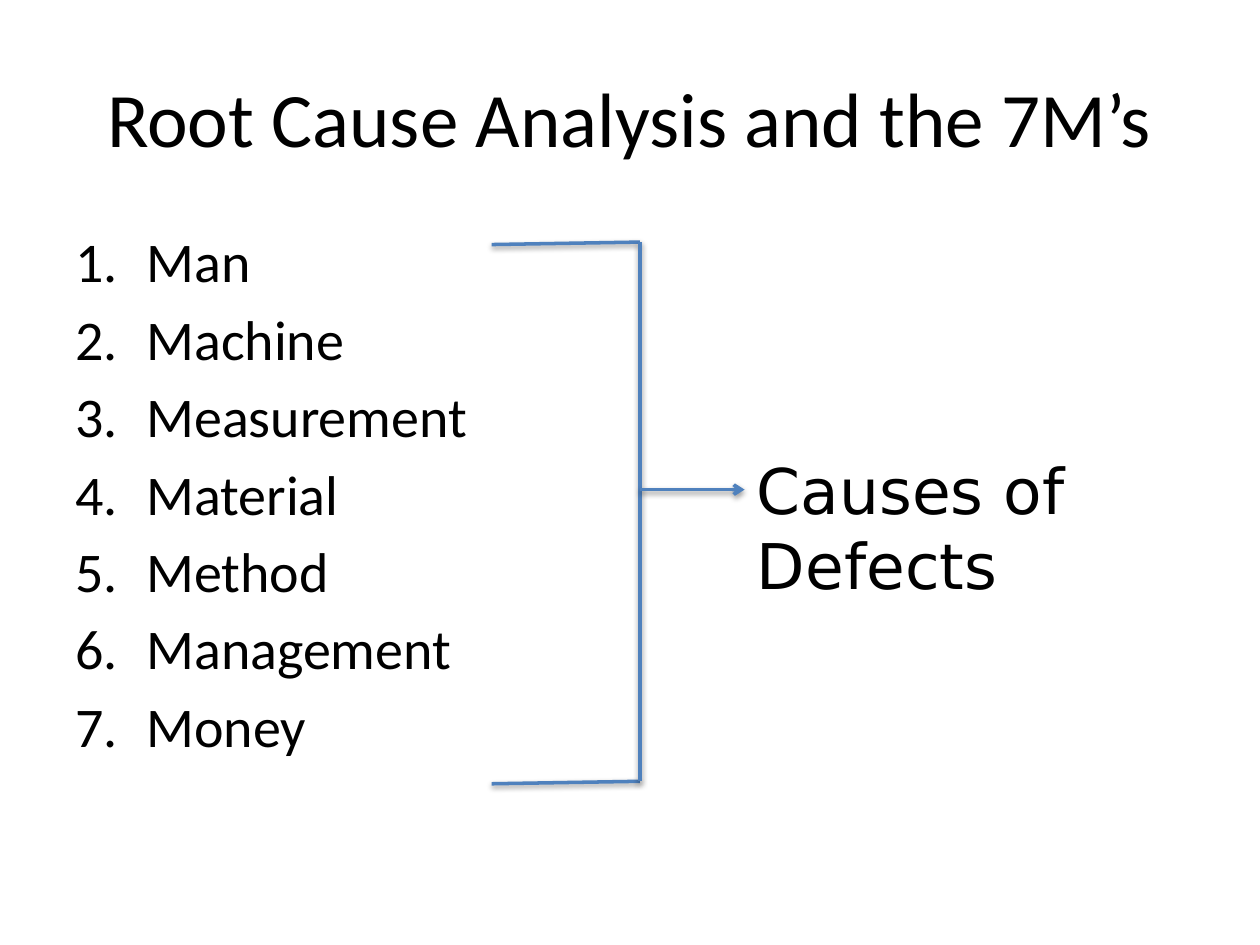
"""Build the slide on root cause analysis and the 7M's."""
from dataclasses import dataclass

from lxml.etree import SubElement
from pptx import Presentation
from pptx.dml.color import RGBColor
from pptx.enum.shapes import MSO_CONNECTOR
from pptx.enum.text import MSO_ANCHOR, PP_ALIGN
from pptx.oxml import parse_xml
from pptx.oxml.ns import nsdecls, qn
from pptx.util import Cm, Pt


@dataclass(frozen=True)
class Theme:
    text: RGBColor = RGBColor(0x00, 0x00, 0x00)
    accent: RGBColor = RGBColor(0x4F, 0x81, 0xBD)
    font: str = "Calibri"
    label_font: str = "DejaVu Sans"
    title_size: float = 44
    body_size: float = 32
    label_size: float = 36
    line_width: float = 2


@dataclass(frozen=True)
class Box:
    x: float
    y: float
    w: float
    h: float


@dataclass(frozen=True)
class Segment:
    x1: float
    y1: float
    x2: float
    y2: float


THEME = Theme()
TITLE = Box(1.27, 0.76, 22.86, 3.18)
LIST = Box(1.27, 4.45, 8.64, 12.57)
LABEL = Box(15.01, 8.97, 10.39, 1.8)
CAUSES = ["Man", "Machine", "Measurement", "Material", "Method", "Management", "Money"]
LEFT, SPINE, TOP, BOTTOM, SLANT = 9.91, 12.9, 4.88, 15.75, 0.05
BRACKET = [
    Segment(LEFT, TOP + SLANT, SPINE, TOP),
    Segment(LEFT, BOTTOM + SLANT, SPINE, BOTTOM),
    Segment(SPINE, TOP, SPINE, BOTTOM),
]
ARROW = Segment(SPINE, LABEL.y + LABEL.h / 2, LABEL.x, LABEL.y + LABEL.h / 2)
SHADOW = (
    f'<a:effectLst {nsdecls("a")}><a:outerShdw blurRad="40000" dist="20000" dir="5400000" '
    'rotWithShape="0"><a:srgbClr val="000000"><a:alpha val="38000"/></a:srgbClr>'
    "</a:outerShdw></a:effectLst>"
)


def add_text(slide, box: Box, lines: list[str], *, size: float, font: str = THEME.font,
             align=PP_ALIGN.LEFT, anchor=MSO_ANCHOR.TOP, numbered: bool = False,
             gap: float = 0):
    """Add a text box with one paragraph per line."""
    sp = slide.shapes.add_textbox(Cm(box.x), Cm(box.y), Cm(box.w), Cm(box.h))
    tf = sp.text_frame
    tf.word_wrap = True
    tf.vertical_anchor = anchor
    for i, line in enumerate(lines):
        p = tf.paragraphs[0] if i == 0 else tf.add_paragraph()
        if numbered:
            pPr = p._p.get_or_add_pPr()
            pPr.set("marL", str(Cm(1.43)))
            pPr.set("indent", str(-Cm(1.43)))
            SubElement(pPr, qn("a:buFont"), typeface="+mj-lt")
            SubElement(pPr, qn("a:buAutoNum"), type="arabicPeriod")
        p.alignment = align
        if i and gap:
            p.space_before = Pt(gap)
        r = p.add_run()
        r.text = line
        r.font.name = font
        r.font.size = Pt(size)
        r.font.color.rgb = THEME.text
    return sp


def add_line(slide, seg: Segment, *, arrow: bool = False):
    """Draw a shadowed straight connector."""
    cxn = slide.shapes.add_connector(
        MSO_CONNECTOR.STRAIGHT, Cm(seg.x1), Cm(seg.y1), Cm(seg.x2), Cm(seg.y2))
    cxn.line.color.rgb = THEME.accent
    cxn.line.width = Pt(THEME.line_width)
    if arrow:
        SubElement(cxn.line._get_or_add_ln(), qn("a:tailEnd"), type="arrow")
    cxn._element.spPr.append(parse_xml(SHADOW))
    return cxn


def main() -> None:
    """Compose and save the slide."""
    prs = Presentation()
    prs.slide_width, prs.slide_height = Cm(25.4), Cm(19.05)
    slide = prs.slides.add_slide(prs.slide_layouts[6])
    add_text(slide, TITLE, ["Root Cause Analysis and the 7M’s"], size=THEME.title_size,
             align=PP_ALIGN.CENTER, anchor=MSO_ANCHOR.MIDDLE)
    add_text(slide, LIST, CAUSES, size=THEME.body_size, numbered=True, gap=5.8)
    label = add_text(slide, LABEL, ["Causes of Defects"], size=THEME.label_size,
                     font=THEME.label_font)
    for seg in BRACKET:
        add_line(slide, seg)
    add_line(slide, ARROW, arrow=True).end_connect(label, 1)
    prs.save("out.pptx")


if __name__ == "__main__":
    main()
